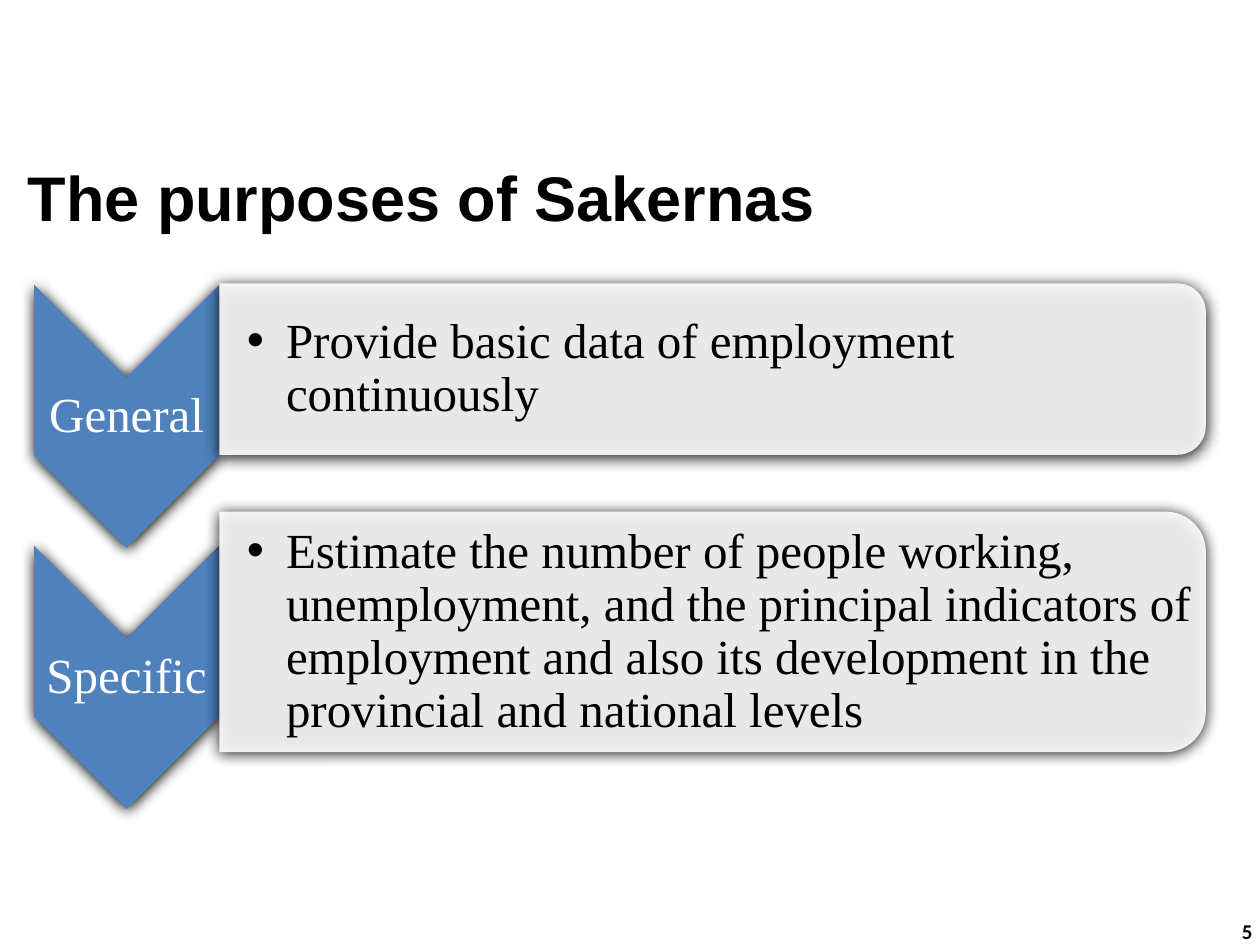
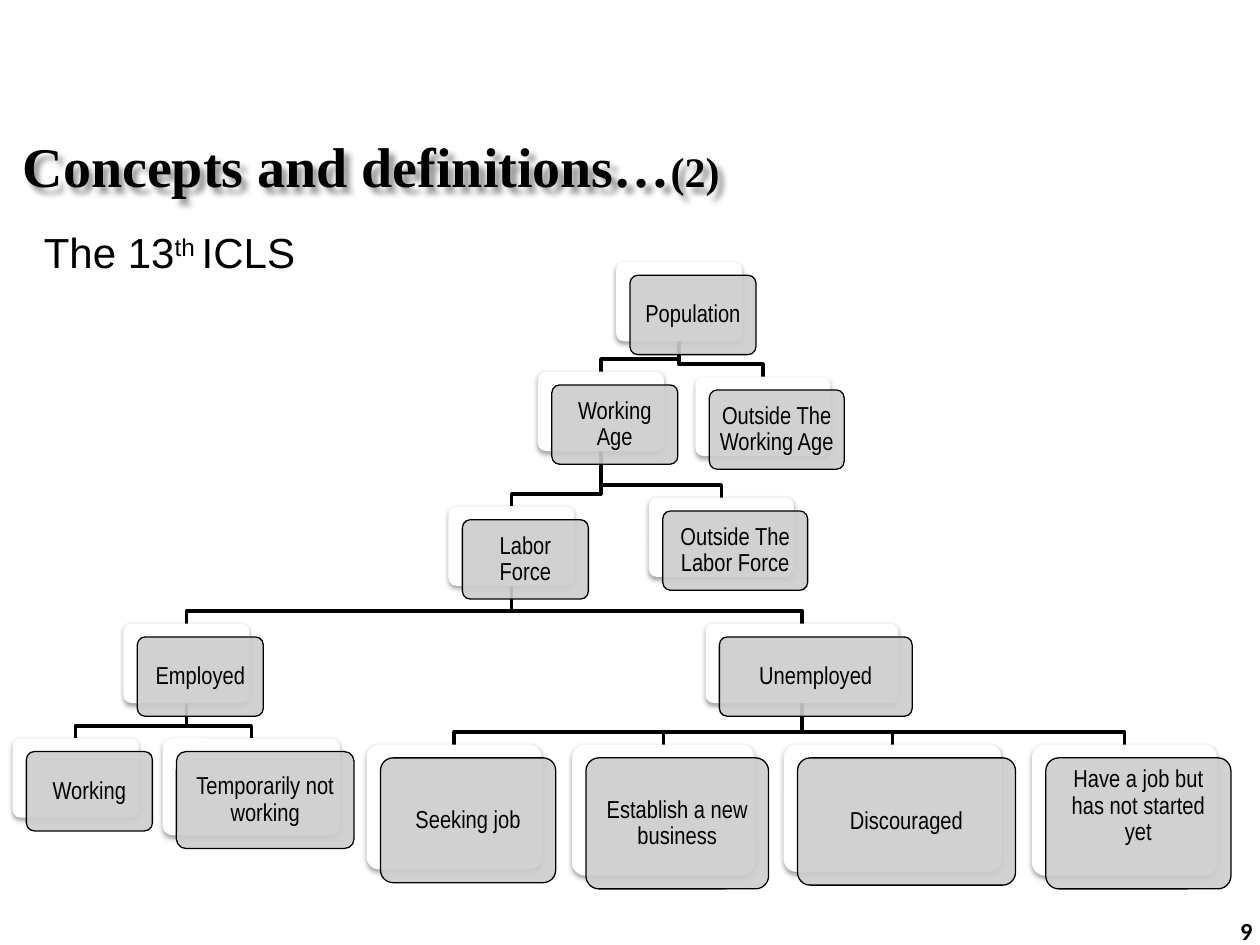
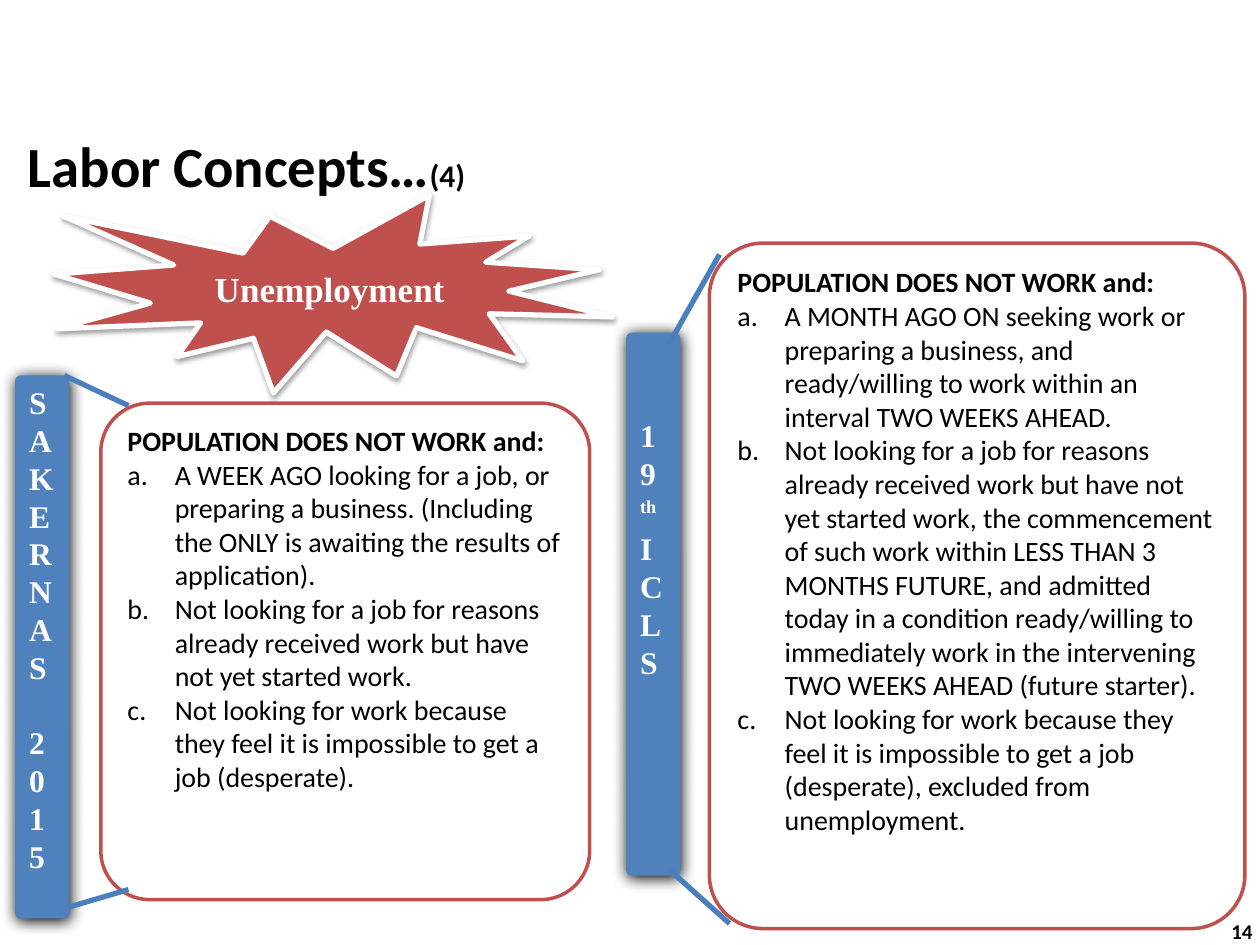
from dataclasses import dataclass
from typing import Optional

from lxml import etree
from pptx import Presentation, util as u
from pptx.dml.color import RGBColor
from pptx.enum import shapes as kinds, text as txt
from pptx.oxml.ns import qn

# Shared look: lengths are cells of a 100 x 75 grid over the slide
COLS, ROWS = 100, 75
WIDTH, HEIGHT = u.Inches(10), u.Inches(7.5)
COLORS = {"ink": "000000", "paper": "FFFFFF", "blue": "4F81BD",
          "link": "4B7EBC", "red": "C0504D", "node": "CCCCCC"}
SERIF, SANS, NARROW, PLAIN = "Times New Roman", "Arial", "Arial Narrow", "Calibri"
CENTER, RIGHT = txt.PP_ALIGN.CENTER, txt.PP_ALIGN.RIGHT
TOP, MIDDLE = txt.MSO_ANCHOR.TOP, txt.MSO_ANCHOR.MIDDLE
GEOMETRY = kinds.MSO_SHAPE


@dataclass(frozen=True)
class Box:
    left: float
    top: float
    width: float
    height: float

    @property
    def center(self) -> float:
        return self.left + self.width / 2

    @property
    def bottom(self) -> float:
        return self.top + self.height

    def shifted(self, right: float, down: float) -> "Box":
        return Box(self.left + right, self.top + down, self.width, self.height)

    def turned(self) -> "Box":
        """Frame that covers this box once rotated by 90 degrees."""
        return Box(self.center - self.height / 2,
                   self.top + (self.height - self.width) / 2,
                   self.height, self.width)


@dataclass(frozen=True)
class Shadow:
    alpha: int
    blur: float
    distance: float
    angle: int = 90


@dataclass(frozen=True)
class Type:
    font: str
    size: float
    color: str = "ink"
    bold: bool = False


@dataclass(frozen=True)
class Span:
    text: str
    size: Optional[float] = None
    raised: bool = False


@dataclass(frozen=True)
class Purpose:
    label: str
    goal: str
    arrow: Box
    card: Box


@dataclass(frozen=True)
class Node:
    label: str
    box: Box
    parent: Optional[str] = None
    lift: float = 0


@dataclass(frozen=True)
class Definition:
    panel: Box
    bar: Box
    links: tuple
    points: tuple


DEEP, SOFT, TITLE_SHADOW = Shadow(100, 8.5, 1), Shadow(38, 3.1, 1.6), Shadow(40, 3, 4, 45)


def x(cols: float) -> int:
    return round(WIDTH * cols / COLS)


def y(rows: float) -> int:
    return round(HEIGHT * rows / ROWS)


def rgb(name: str) -> RGBColor:
    return RGBColor.from_string(COLORS[name])


def place(shape, box: Box) -> None:
    shape.left, shape.top = x(box.left), y(box.top)
    shape.width, shape.height = x(box.width), y(box.height)


def cast(shape, shadow: Optional[Shadow]) -> None:
    """Replace the theme shadow by the given one, or by none."""
    shape.shadow.inherit = False
    if shadow:
        effects = shape._element.spPr.find(qn("a:effectLst"))
        outer = etree.SubElement(
            effects, qn("a:outerShdw"), blurRad=str(u.Pt(shadow.blur)),
            dist=str(u.Pt(shadow.distance)), dir=str(shadow.angle * 60000),
            algn="ctr", rotWithShape="0")
        color = etree.SubElement(outer, qn("a:srgbClr"), val=COLORS["ink"])
        etree.SubElement(color, qn("a:alpha"), val=str(shadow.alpha * 1000))


def draw(slide, kind, box: Box, fill: str, line: Optional[str] = None, weight: float = 0,
         shadow: Optional[Shadow] = None, opacity: int = 100, corner: Optional[float] = None):
    shape = slide.shapes.add_shape(kind, x(box.left), y(box.top), x(box.width), y(box.height))
    shape.fill.solid()
    shape.fill.fore_color.rgb = rgb(fill)
    if opacity < 100:
        color = shape._element.spPr.find(qn("a:solidFill"))[0]
        etree.SubElement(color, qn("a:alpha"), val=str(opacity * 1000))
    if line:
        shape.line.color.rgb = rgb(line)
        shape.line.width = u.Pt(weight)
    else:
        shape.line.fill.background()
    if corner is not None:
        shape.adjustments[0] = corner
    cast(shape, shadow)
    return shape


def frame(shape, anchor=TOP, insets=(1, 0.5, 1, 0.5)):
    """Prepare a text frame; insets are left, top, right, bottom in grid cells."""
    body = shape.text_frame
    body.word_wrap = True
    body.auto_size = txt.MSO_AUTO_SIZE.NONE
    body.vertical_anchor = anchor
    body.margin_left, body.margin_right = x(insets[0]), x(insets[2])
    body.margin_top, body.margin_bottom = y(insets[1]), y(insets[3])
    return body


def write(paragraph, style: Type, *spans: Span, align=txt.PP_ALIGN.LEFT, spacing=None,
          bullet=None, hang: float = 0) -> None:
    """Fill a paragraph; bullet is a tag name with its attributes."""
    if bullet:
        tag, attributes = bullet
        props = paragraph._p.get_or_add_pPr()
        props.set("marL", str(x(hang)))
        props.set("indent", str(-x(hang)))
        etree.SubElement(props, qn(tag), **attributes)
    paragraph.alignment = align
    paragraph.space_before = u.Pt(0)
    if spacing:
        paragraph.line_spacing = spacing
    font = paragraph.font
    font.name, font.size, font.bold = style.font, u.Pt(style.size), style.bold
    font.color.rgb = rgb(style.color)
    for span in spans:
        run = paragraph.add_run()
        run.text = span.text
        if span.size:
            run.font.size = u.Pt(span.size)
        if span.raised:
            run.font._element.set("baseline", "30000")


def label(slide, box: Box, style: Type, *spans: Span, anchor=TOP,
          insets=(1, 0.5, 1, 0.5), **options) -> None:
    area = slide.shapes.add_textbox(x(box.left), y(box.top), x(box.width), y(box.height))
    write(frame(area, anchor, insets).paragraphs[0], style, *spans, **options)


def start_slide(deck, layout: int, title_box: Box, style: Type, title: tuple,
                number: str, number_size: float = 12):
    """Add a slide with its title and page number."""
    slide = deck.slides.add_slide(deck.slide_layouts[layout])
    place(slide.shapes.title, title_box)
    write(frame(slide.shapes.title, MIDDLE).paragraphs[0], style, *title)
    label(slide, Box(77.1, 71.9, 23.3, 4), Type(PLAIN, number_size, bold=True),
          Span(number), anchor=MIDDLE, align=RIGHT)
    return slide


# Purposes: a chevron and a card for each
PURPOSES = (
    Purpose("General", "Provide basic data of employment continuously",
            Box(2.7, 22.6, 14.7, 20.9), Box(17.4, 22.5, 78.3, 13.6)),
    Purpose("Specific",
            "Estimate the number of people working, unemployment, and the principal "
            "indicators of employment and also its development in the provincial and "
            "national levels",
            Box(2.7, 43.3, 14.7, 20.9), Box(17.4, 40.6, 78.3, 19.1)),
)


def purposes_slide(deck) -> None:
    slide = start_slide(deck, 3, Box(1.2, 12.5, 90.6, 6.2), Type(SANS, 36, bold=True),
                        (Span("The purposes of Sakernas"),), "5")
    goals = [holder for holder in slide.placeholders if holder.placeholder_format.idx > 0]
    for purpose, goal in zip(PURPOSES, goals):
        for kind, box, fill, opacity in (
                (GEOMETRY.CHEVRON, purpose.arrow, "blue", 100),
                (GEOMETRY.ROUND_2_SAME_RECTANGLE, purpose.card, "paper", 90)):
            draw(slide, kind, box.turned(), fill, shadow=DEEP, opacity=opacity).rotation = 90
        arrow, card = purpose.arrow, purpose.card
        label(slide, Box(arrow.left, arrow.top + 7.3, arrow.width, 6.3),
              Type(SERIF, 28, "paper"), Span(purpose.label), anchor=MIDDLE,
              insets=(0.2,) * 4, align=CENTER, spacing=0.9)
        place(goal, Box(card.left, card.top + 0.8, card.width - 0.8, card.height - 1.6))
        write(frame(goal, MIDDLE, (2.2, 0.2, 0.2, 0.2)).paragraphs[0], Type(SERIF, 28),
              Span(purpose.goal), spacing=0.9, bullet=("a:buChar", {"char": "•"}), hang=3.1)
        slide.shapes._spTree.append(goal._element)  # above its card


# Labour force tree: each node names its parent
NODES = (
    Node("Population", Box(48.9, 20.8, 10, 6.3)),
    Node("Working Age", Box(42.7, 29.5, 10, 6.3), "Population"),
    Node("Labor Force", Box(35.6, 40.2, 10, 6.3), "Working Age"),
    Node("Employed", Box(9.8, 49.5, 10, 6.3), "Labor Force"),
    Node("Working", Box(1, 58.6, 10, 6.3), "Employed"),
    Node("Temporarily not working", Box(12.9, 58.6, 14.1, 7.7), "Employed"),
    Node("Unemployed", Box(56, 49.5, 15.3, 6.3), "Labor Force"),
    Node("Seeking job", Box(29.1, 59.1, 13.9, 9.9), "Unemployed"),
    Node("Establish a new business", Box(45.4, 59.1, 14.5, 10.4), "Unemployed"),
    Node("Discouraged", Box(62.2, 59.1, 17.3, 10.1), "Unemployed"),
    Node("Have a job but has not started yet", Box(81.9, 59.1, 14.7, 10.4), "Unemployed",
         lift=2.7),
    Node("Outside The Labor Force", Box(51.5, 39.5, 11.5, 6.3), "Working Age"),
    Node("Outside The Working Age", Box(55.2, 29.9, 10.7, 6.3), "Population"),
)


def branch(slide, parent: Box, child: Box) -> None:
    """Elbow line that turns one row above the child."""
    bend = y(child.top - 1)
    builder = slide.shapes.build_freeform(x(parent.center), y(parent.bottom), scale=1.0)
    builder.add_line_segments([(x(parent.center), bend), (x(child.center), bend),
                               (x(child.center), y(child.top))], close=False)
    line = builder.convert_to_shape()
    line.fill.background()
    line.line.color.rgb = rgb("ink")
    line.line.width = u.Pt(2)
    cast(line, None)


def tree_slide(deck) -> None:
    slide = start_slide(deck, 5, Box(0.8, 10, 86.6, 6.2), Type(SERIF, 32, bold=True),
                        (Span("Concepts and definitions…"), Span("(2)", 24)), "9", 14)
    cast(slide.shapes.title, TITLE_SHADOW)
    boxes = {node.label: node.box for node in NODES}
    for node in NODES:
        if node.parent:
            branch(slide, boxes[node.parent], node.box)
    for node in NODES:
        draw(slide, GEOMETRY.ROUNDED_RECTANGLE, node.box, "paper", shadow=SOFT, corner=0.1)
        front = draw(slide, GEOMETRY.ROUNDED_RECTANGLE, node.box.shifted(1.1, 1.05), "node",
                     "ink", 0.75, opacity=90, corner=0.1)
        write(frame(front, MIDDLE, (0.6, 0.6, 0.6, 0.6 + node.lift)).paragraphs[0],
              Type(NARROW, 14), Span(node.label), align=CENTER, spacing=0.9)
    label(slide, Box(2.5, 17.5, 31.7, 5), Type(SANS, 24),
          Span("The 13"), Span("th ", raised=True), Span("ICLS"))


# Unemployment: two definitions side by side, each with a bar and two links
SURVEY = Definition(
    Box(8, 32, 38.8, 39.4), Box(1.2, 29.8, 4.3, 43.1),
    ((5.1, 29.8, 10.2, 32.2), (5.1, 72.1, 10.2, 70.6)),
    ("A WEEK AGO looking for a job, or preparing a business. (Including the ONLY is "
     "awaiting the results of application).",
     "Not looking for a job for reasons already received work but have not yet started work.",
     "Not looking for work because they feel it is impossible to get a job (desperate)."))
STANDARD = Definition(
    Box(56.3, 19.3, 42.5, 54.4), Box(49.7, 26.4, 4.3, 43.1),
    ((53.1, 27.3, 57.1, 20.2), (57.9, 73.3, 53.1, 69)),
    ("A MONTH AGO ON seeking work or preparing a business, and ready/willing to work "
     "within an interval TWO WEEKS AHEAD.",
     "Not looking for a job for reasons already received work but have not yet started "
     "work, the commencement of such work within LESS THAN 3 MONTHS FUTURE, and admitted "
     "today in a condition ready/willing to immediately work in the intervening TWO WEEKS "
     "AHEAD (future starter).",
     "Not looking for work because they feel it is impossible to get a job (desperate), "
     "excluded from unemployment."))
BAR_TYPE = Type(SERIF, 18, "paper", True)


def define(slide, definition: Definition, bar_lines: list, bar_inset: float = 0.5):
    """Draw bar and panel; return the bar's text frame."""
    bar = draw(slide, GEOMETRY.ROUNDED_RECTANGLE, definition.bar, "blue", shadow=DEEP,
               corner=0.1)
    bar_text = frame(bar, TOP, (1, bar_inset, 1, 0.5))
    for i, spans in enumerate(bar_lines):
        write(bar_text.add_paragraph() if i else bar_text.paragraphs[0], BAR_TYPE, *spans)
    panel = draw(slide, GEOMETRY.ROUNDED_RECTANGLE, definition.panel, "paper", "red", 2,
                 corner=0.1)
    panel_text = frame(panel)
    write(panel_text.paragraphs[0], Type(PLAIN, 16, bold=True),
          Span("POPULATION DOES NOT WORK and:"))
    for point in definition.points:
        write(panel_text.add_paragraph(), Type(PLAIN, 16), Span(point),
              bullet=("a:buAutoNum", {"type": "alphaLcPeriod"}), hang=3.75)
    return bar_text


def unemployment_slide(deck) -> None:
    slide = start_slide(deck, 5, Box(1.2, 10, 90.6, 6.2), Type(PLAIN, 32.4, bold=True),
                        (Span("Labor Concepts…"), Span("(4)", 18)), "14")
    name, year = "SAKERNAS", "2015"
    letters = define(slide, SURVEY, [(Span(letter),) for letter in name + year])
    letters.paragraphs[len(name)].space_before = u.Pt(21.6)
    define(slide, STANDARD, [(Span("19"),), (Span("th", raised=True), Span(" ICLS"))], 6.5)
    for x1, y1, x2, y2 in SURVEY.links + STANDARD.links:
        link = slide.shapes.add_connector(kinds.MSO_CONNECTOR.STRAIGHT,
                                          x(x1), y(y1), x(x2), y(y2))
        link.line.color.rgb = rgb("link")
        link.line.width = u.Pt(3)
        etree.SubElement(link._element.spPr, qn("a:effectLst"))
    burst = draw(slide, GEOMETRY.EXPLOSION1, Box(4.3, 15.5, 44.3, 15.7), "red", "paper", 3,
                 shadow=SOFT)
    write(frame(burst, MIDDLE).paragraphs[0], Type(SERIF, 20, "paper", True),
          Span("Unemployment"), align=CENTER)


def main() -> None:
    deck = Presentation()
    deck.slide_width, deck.slide_height = WIDTH, HEIGHT
    purposes_slide(deck)
    tree_slide(deck)
    unemployment_slide(deck)
    deck.save("out.pptx")


if __name__ == "__main__":
    main()
